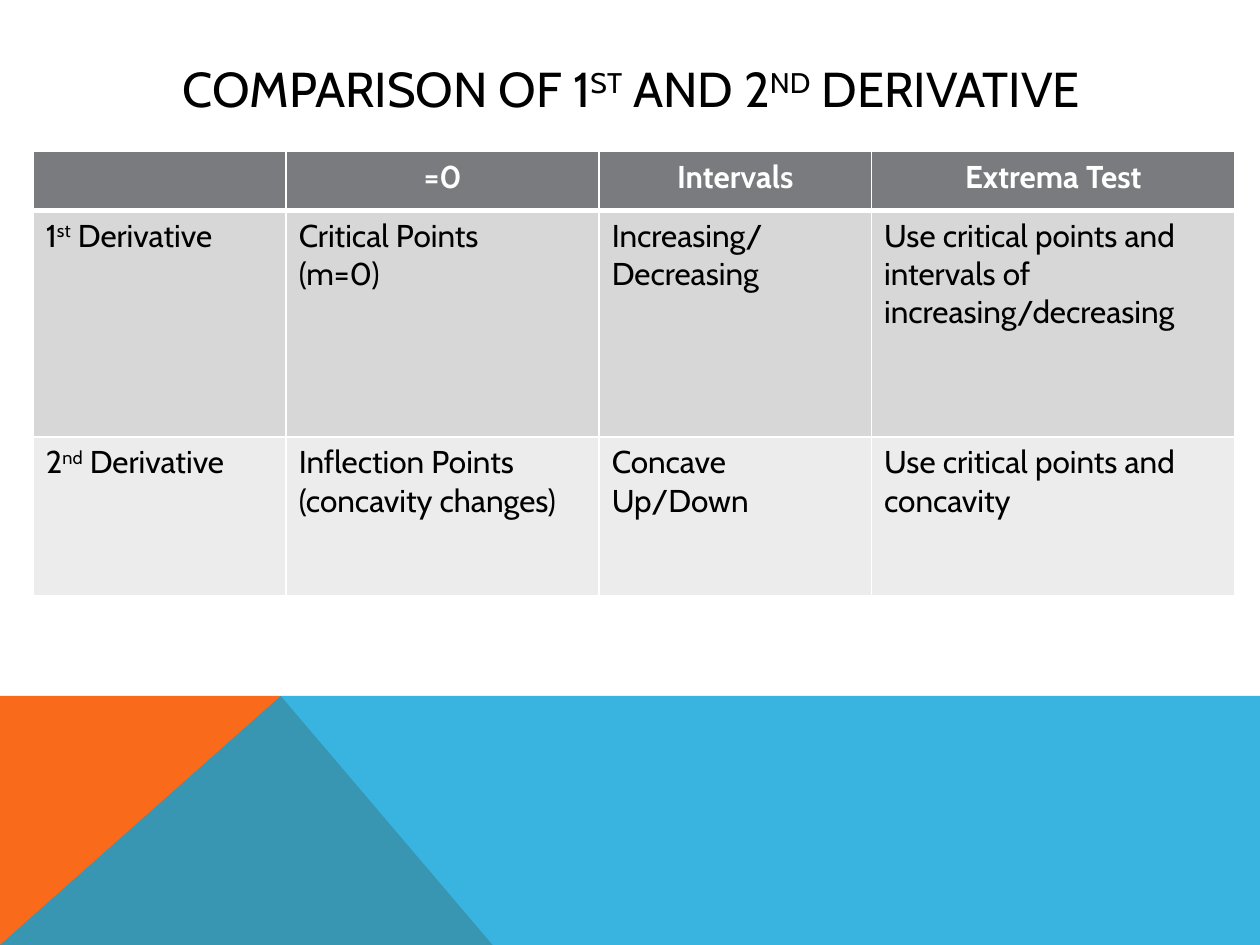
from dataclasses import dataclass

from lxml.etree import SubElement
from pptx import Presentation
from pptx.dml.color import RGBColor as RGB
from pptx.enum.text import MSO_ANCHOR as Anchor, PP_ALIGN as Align
from pptx.oxml.ns import qn
from pptx.util import Cm, Pt


@dataclass(frozen=True)
class Theme:
    font: str = "Cabin"
    title_size: int = 28
    table_size: int = 18
    text: str = "000000"
    header_text: str = "FFFFFF"
    border: str = "FFFFFF"
    header: str = "797B7E"
    rows: tuple = ("D7D7D8", "ECECEC")
    orange: str = "F96A1B"
    blue: str = "08A1D9"
    blue_alpha: int = 80000


THEME = Theme()

COLUMN_WIDTHS = (5.1, 6.31, 5.49, 7.33)
ROW_HEIGHTS = (1.19, 4.57, 3.2)
# Carets enclose superscripts; each newline starts a paragraph
ROWS = (
    ("", "=0", "Intervals", "Extrema Test"),
    ("1^st^ Derivative", "Critical Points\n(m=0)", "Increasing/\nDecreasing",
     "Use critical points and intervals of increasing/decreasing"),
    ("2^nd^ Derivative", "Inflection Points\n(concavity changes)",
     "Concave Up/Down", "Use critical points and concavity"),
)


def write_text(text_frame, text, size, color, bold=False, align=Align.LEFT):
    text_frame.text = text.replace("^", "")
    for paragraph, line in zip(text_frame.paragraphs, text.split("\n")):
        paragraph.alignment = align
        paragraph.font.size = Pt(size)
        paragraph.text = ""
        for index, part in enumerate(line.split("^")):
            if not part:
                continue
            run = paragraph.add_run()
            run.text = part
            run.font.name = THEME.font
            run.font.size = Pt(size)
            run.font.bold = bold
            run.font.color.rgb = RGB.from_string(color)
            if index % 2:
                run.font._element.set("baseline", "30000")


def add_polygon(slide, points, color, alpha=None):
    corners = [(Cm(x), Cm(y)) for x, y in points]
    builder = slide.shapes.build_freeform(*corners[0])
    builder.add_line_segments(corners[1:], close=True)
    shape = builder.convert_to_shape()
    shape.shadow.inherit = False
    shape.line.fill.background()
    shape.fill.solid()
    shape.fill.fore_color.rgb = RGB.from_string(color)
    if alpha:
        color_element = shape.fill._xPr.find(".//" + qn("a:srgbClr"))
        SubElement(color_element, qn("a:alpha"), val=str(alpha))


def add_footer_band(slide, left, top, width, height):
    peak, foot = left + 5.66, left + 9.93
    right, bottom = left + width, top + height
    add_polygon(slide, [(left, bottom), (left, top), (peak, top),
                        (foot, bottom)], THEME.orange)
    # The translucent blue darkens where it crosses the orange
    add_polygon(slide, [(left, bottom), (peak, top), (right, top),
                        (right, bottom)], THEME.blue, THEME.blue_alpha)


def add_title(slide, left, top, width, height):
    box = slide.shapes.add_textbox(Cm(left), Cm(top), Cm(width), Cm(height))
    text_frame = box.text_frame
    text_frame.word_wrap = True
    text_frame.vertical_anchor = Anchor.MIDDLE
    write_text(text_frame, "COMPARISON OF 1^ST^ AND 2^ND^ DERIVATIVE",
               THEME.title_size, THEME.text, align=Align.CENTER)


def set_borders(cell, top=1, bottom=1):
    properties = cell._tc.get_or_add_tcPr()
    widths = {"a:lnL": 1, "a:lnR": 1, "a:lnT": top, "a:lnB": bottom}
    for tag, width in widths.items():
        line = SubElement(properties, qn(tag), w=str(Pt(width)))
        fill = SubElement(line, qn("a:solidFill"))
        SubElement(fill, qn("a:srgbClr"), val=THEME.border)


def add_comparison_table(slide, left, top, width, height):
    table = slide.shapes.add_table(
        len(ROWS), len(COLUMN_WIDTHS),
        Cm(left), Cm(top), Cm(width), Cm(height)).table
    for column, column_width in zip(table.columns, COLUMN_WIDTHS):
        column.width = Cm(column_width)
    for row, row_height in zip(table.rows, ROW_HEIGHTS):
        row.height = Cm(row_height)

    fills = (THEME.header, *THEME.rows)
    for row_index, texts in enumerate(ROWS):
        is_header = row_index == 0
        for column_index, text in enumerate(texts):
            cell = table.cell(row_index, column_index)
            # A thick rule separates the header from the body
            set_borders(cell, top=3 if row_index == 1 else 1,
                        bottom=3 if is_header else 1)
            cell.fill.solid()
            cell.fill.fore_color.rgb = RGB.from_string(fills[row_index])
            write_text(cell.text_frame, text, THEME.table_size,
                       THEME.header_text if is_header else THEME.text,
                       bold=is_header,
                       align=Align.CENTER if is_header else Align.LEFT)


def main():
    presentation = Presentation()
    presentation.slide_width, presentation.slide_height = Cm(25.4), Cm(19.05)
    slide = presentation.slides.add_slide(presentation.slide_layouts[6])
    add_footer_band(slide, 0, 14.03, 25.4, 5.02)
    add_title(slide, 2.29, 1.02, 20.88, 1.52)
    add_comparison_table(slide, 0.67, 3.05, sum(COLUMN_WIDTHS),
                         sum(ROW_HEIGHTS))
    presentation.save("out.pptx")


if __name__ == "__main__":
    main()
